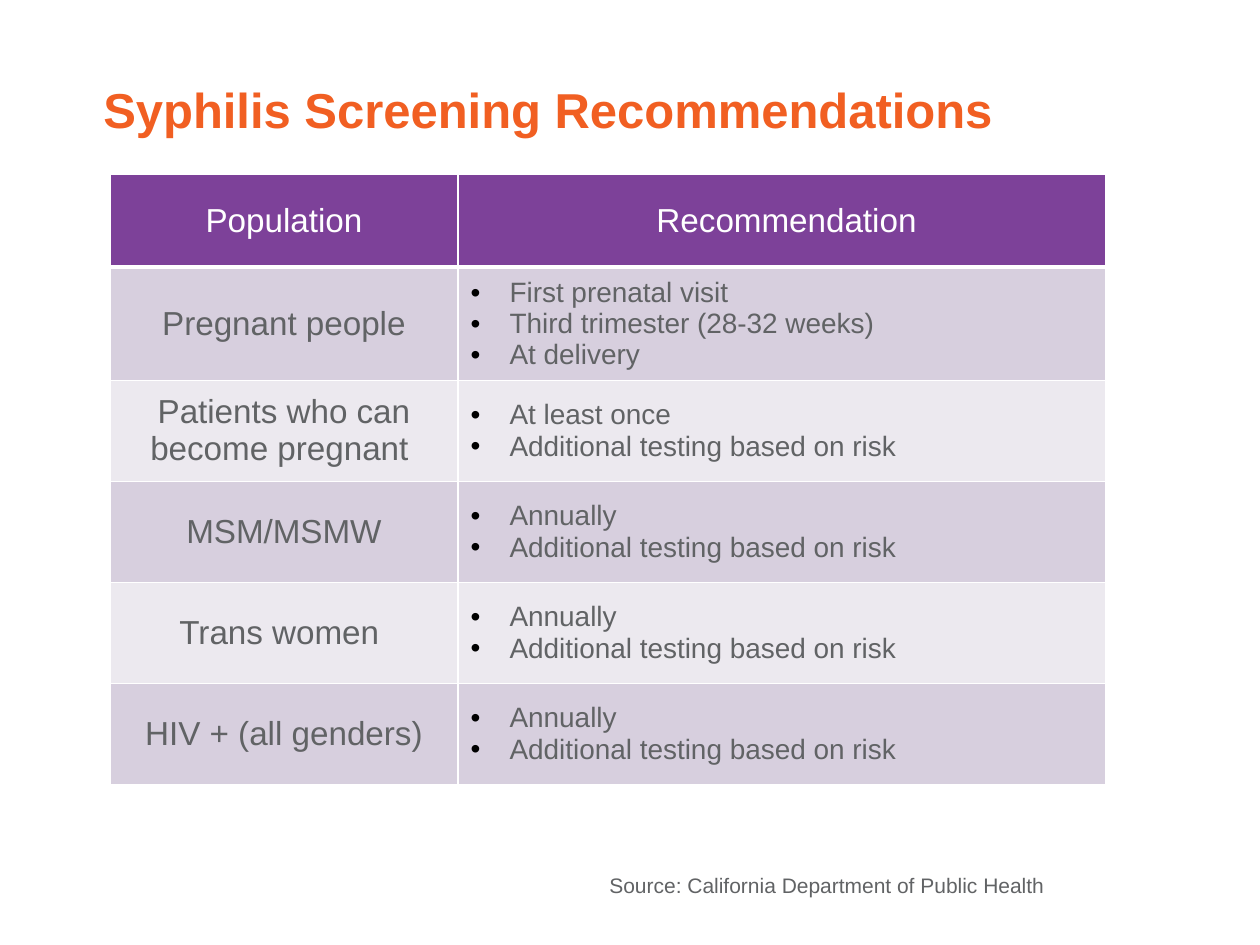
from lxml.etree import SubElement
from pptx import Presentation
from pptx.dml.color import RGBColor
from pptx.enum.text import MSO_ANCHOR, MSO_AUTO_SIZE, PP_ALIGN
from pptx.oxml import parse_xml
from pptx.oxml.ns import nsdecls, qn
from pptx.util import Emu, Pt

WHITE, GRAY, ORANGE, PURPLE = "FFFFFF", "616365", "F15F22", "7D4199"
BANDS = ["D7CFDE", "ECE9EF"]
RISK = "Additional testing based on risk"
HEADERS = ["Population", " Recommendation"]
RECOMMENDATIONS = [
    ("Pregnant people",
     ["First prenatal visit", "Third trimester (28-32 weeks)", "At delivery"]),
    ("Patients who can become pregnant ", ["At least once", RISK]),
    ("MSM/MSMW", ["Annually", RISK]),
    ("Trans women ", ["Annually", RISK]),
    ("HIV + (all genders)", ["Annually", RISK]),
]


def px(length):
    return Emu(round(length * 914400 / 126))


def color(value):
    return RGBColor.from_string(value)


class ScreeningSlide:
    font = "Arial"

    def __init__(self, deck):
        self.page = deck.slides.add_slide(deck.slide_layouts[6])

    def style(self, para, size, shade, bold=False):
        for span in para.runs:
            span.font.name = self.font
            span.font.size = Pt(size)
            span.font.bold = bold
            span.font.color.rgb = color(shade)

    def text(self, area, words, size, shade, bold=False, wrap=True,
             anchor=MSO_ANCHOR.TOP, spacing=None):
        frame = self.page.shapes.add_textbox(*map(px, area)).text_frame
        frame.word_wrap = wrap
        frame.auto_size = MSO_AUTO_SIZE.SHAPE_TO_FIT_TEXT
        frame.vertical_anchor = anchor
        frame.text = words
        para = frame.paragraphs[0]
        para.line_spacing = spacing
        self.style(para, size, shade, bold)

    def table(self, left, top, widths, heights):
        table = self.page.shapes.add_table(
            len(heights), len(widths), px(left), px(top),
            px(sum(widths)), px(sum(heights))).table
        for column, width in zip(table.columns, widths):
            column.width = px(width)
        for row, height in zip(table.rows, heights):
            row.height = px(height)
        return table

    def cell(self, cell, lines, size, shade, fill, bottom=1, bulleted=False):
        cell.fill.solid()
        cell.fill.fore_color.rgb = color(fill)
        cell.vertical_anchor = MSO_ANCHOR.MIDDLE
        self.borders(cell, bottom)
        cell.text_frame.text = "\n".join(lines)
        for para in cell.text_frame.paragraphs:
            if bulleted:
                self.bullet(para)
            else:
                para.alignment = PP_ALIGN.CENTER
            self.style(para, size, shade)

    def borders(self, cell, bottom):
        properties = cell._tc.get_or_add_tcPr()
        for index, (side, width) in enumerate(
                [("L", 1), ("R", 1), ("T", 1), ("B", bottom)]):
            properties.insert(index, parse_xml(
                f'<a:ln{side} {nsdecls("a")} w="{Pt(width)}"><a:solidFill>'
                f'<a:srgbClr val="{WHITE}"/></a:solidFill></a:ln{side}>'))

    def bullet(self, para):
        properties = para._p.get_or_add_pPr()
        properties.set("marL", str(px(39)))
        properties.set("indent", str(-px(39)))
        shade = SubElement(properties, qn("a:buClr"))
        SubElement(shade, qn("a:srgbClr"), val="000000")
        SubElement(properties, qn("a:buFont"), typeface=self.font)
        SubElement(properties, qn("a:buChar"), char="•")


def main():
    deck = Presentation()
    deck.slide_width, deck.slide_height = px(1260), px(945)
    slide = ScreeningSlide(deck)
    slide.text((91, 79, 1036, 67), "Syphilis Screening Recommendations", 28,
               ORANGE, bold=True, anchor=MSO_ANCHOR.MIDDLE, spacing=0.9)
    slide.text((597, 866, 464, 38),
               "Source: California Department of Public Health", 12, GRAY,
               wrap=False)

    table = slide.table(110, 174, [348, 648], [93, 113] + [101] * 4)
    for column, header in enumerate(HEADERS):
        slide.cell(table.cell(0, column), [header], 19, WHITE, PURPLE, bottom=3)
    for row, (population, advice) in enumerate(RECOMMENDATIONS, 1):
        band = BANDS[(row - 1) % 2]
        slide.cell(table.cell(row, 0), [population], 19, GRAY, band)
        slide.cell(table.cell(row, 1), advice, 16, GRAY, band, bulleted=True)
    deck.save("out.pptx")


if __name__ == "__main__":
    main()
